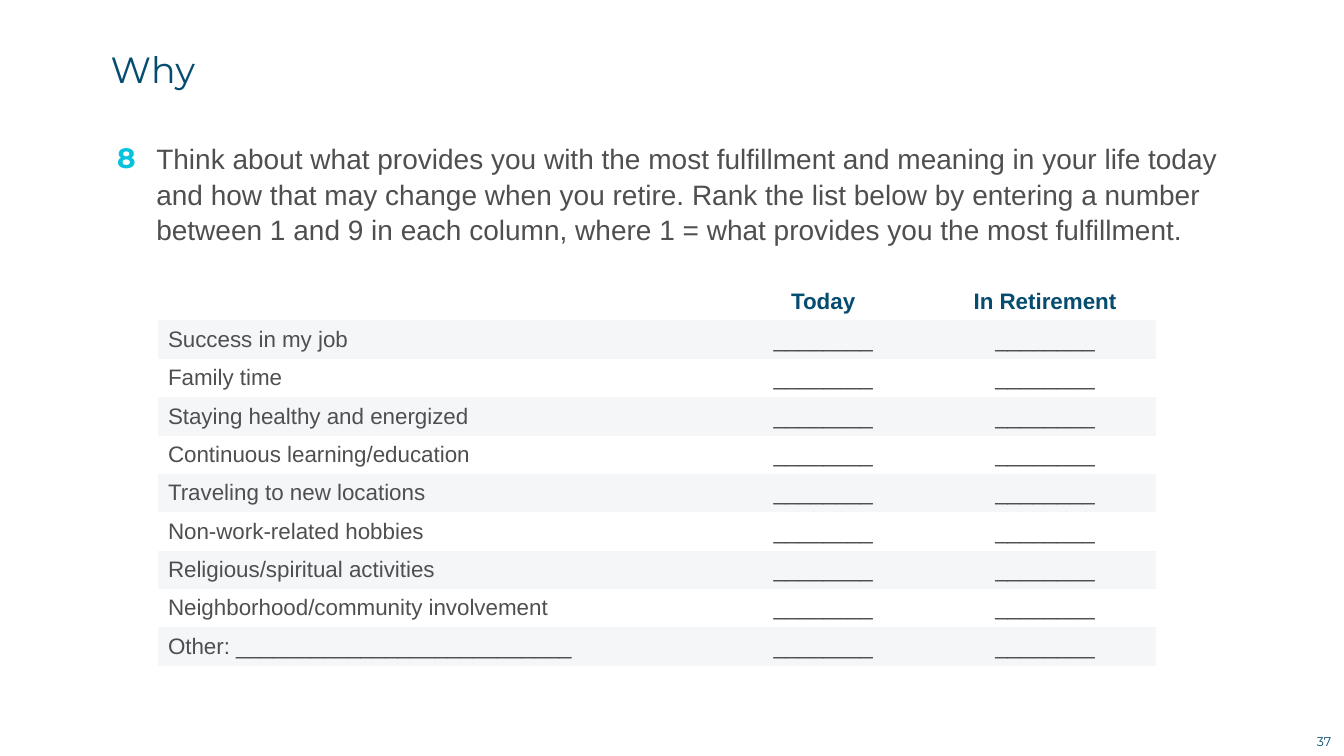
from dataclasses import dataclass
from typing import Optional

from lxml import etree
from pptx import Presentation
from pptx.dml.color import RGBColor
from pptx.enum.text import MSO_ANCHOR, PP_ALIGN
from pptx.oxml.ns import qn
from pptx.util import Cm, Pt

LEFT, CENTER = PP_ALIGN.LEFT, PP_ALIGN.CENTER
TOP, MIDDLE = MSO_ANCHOR.TOP, MSO_ANCHOR.MIDDLE
PLAIN_TABLE_STYLE = "{2D5ABB26-0587-4C30-8999-92F81FD0307C}"


@dataclass(frozen=True)
class Theme:
    navy: RGBColor = RGBColor(0x05, 0x4C, 0x70)
    cyan: RGBColor = RGBColor(0x05, 0xC3, 0xDE)
    grey: RGBColor = RGBColor(0x4F, 0x4F, 0x4F)
    band: RGBColor = RGBColor(0xF4, 0xF6, 0xF8)
    heading_font: str = "Montserrat"
    body_font: str = "Arial"
    title_size: int = 26
    prompt_size: int = 20
    table_size: int = 16
    page_size: int = 9


THEME = Theme()


@dataclass(frozen=True)
class TextStyle:
    font: str
    size: int
    color: RGBColor
    bold: bool = False
    align: PP_ALIGN = LEFT


@dataclass(frozen=True)
class TextBlock:
    """Text with its place in centimetres."""
    text: str
    left: float
    top: float
    width: float
    height: float
    style: TextStyle
    anchor: MSO_ANCHOR = TOP
    side_inset: float = 0
    line_spacing: Optional[float] = None


BLOCKS = [
    TextBlock("37", 32.94, 18.36, 0.86, 0.64,
              TextStyle(THEME.heading_font, THEME.page_size, THEME.navy, align=CENTER), MIDDLE),
    TextBlock("Why", 2.54, 0.71, 29.21, 2.06,
              TextStyle(THEME.heading_font, THEME.title_size, THEME.navy), MIDDLE, 0.25),
    TextBlock("Think about what provides you with the most fulfillment and meaning in your life "
              "today and how that may change when you retire. Rank the list below by entering a "
              "number between 1 and 9 in each column, where 1 = what provides you the most "
              "fulfillment.", 3.94, 3.53, 26.95, 2.57,
              TextStyle(THEME.body_font, THEME.prompt_size, THEME.grey), line_spacing=1.05),
    TextBlock("8", 2.95, 3.53, 1.02, 0.86,
              TextStyle(THEME.heading_font, THEME.prompt_size, THEME.cyan, bold=True)),
]

COLUMN_WIDTHS = [13.97, 5.59, 5.59]
TABLE_HEIGHT = 9.66
HEADINGS = ["", "Today", "In Retirement"]
ANSWER_BLANK = "_" * 8
SOURCES_OF_FULFILLMENT = [
    "Success in my job",
    "Family time",
    "Staying healthy and energized",
    "Continuous learning/education",
    "Traveling to new locations",
    "Non-work-related hobbies",
    "Religious/spiritual activities",
    "Neighborhood/community involvement",
    "Other: " + "_" * 27,
]


def write(paragraph, text: str, style: TextStyle) -> None:
    paragraph.alignment = style.align
    if not text:
        # An empty paragraph takes its height from its end mark.
        etree.SubElement(paragraph._p, qn("a:endParaRPr"), sz=str(style.size * 100))
        return
    run = paragraph.add_run()
    run.text = text
    run.font.name = style.font
    run.font.size = Pt(style.size)
    run.font.bold = style.bold
    run.font.color.rgb = style.color


def add_block(slide, block: TextBlock) -> None:
    box = slide.shapes.add_textbox(Cm(block.left), Cm(block.top), Cm(block.width), Cm(block.height))
    frame = box.text_frame
    frame.word_wrap = True
    frame.vertical_anchor = block.anchor
    frame.margin_left = frame.margin_right = Cm(block.side_inset)
    frame.margin_top = frame.margin_bottom = 0
    paragraph = frame.paragraphs[0]
    paragraph.line_spacing = block.line_spacing
    write(paragraph, block.text, block.style)


def add_ranking_table(slide) -> None:
    rows = [HEADINGS] + [[source, ANSWER_BLANK, ANSWER_BLANK] for source in SOURCES_OF_FULFILLMENT]
    holder = slide.shapes.add_table(len(rows), len(HEADINGS), Cm(3.98), Cm(7.11),
                                    Cm(sum(COLUMN_WIDTHS)), Cm(TABLE_HEIGHT))
    ranking = holder.table
    ranking.first_row = ranking.horz_banding = False
    for style_id in holder.element.iter(qn("a:tableStyleId")):
        style_id.text = PLAIN_TABLE_STYLE
    for column, width in zip(ranking.columns, COLUMN_WIDTHS):
        column.width = Cm(width)
    for r, texts in enumerate(rows):
        ranking.rows[r].height = Cm(TABLE_HEIGHT / len(rows))
        is_heading = r == 0
        for c, text in enumerate(texts):
            cell = ranking.cell(r, c)
            cell.vertical_anchor = MIDDLE
            if r % 2:
                cell.fill.solid()
                cell.fill.fore_color.rgb = THEME.band
            else:
                cell.fill.background()
            style = TextStyle(THEME.body_font, THEME.table_size,
                              THEME.navy if is_heading else THEME.grey,
                              is_heading, CENTER if c else LEFT)
            write(cell.text_frame.paragraphs[0], text, style)


def main() -> None:
    deck = Presentation()
    deck.slide_width, deck.slide_height = Cm(33.87), Cm(19.05)
    slide = deck.slides.add_slide(deck.slide_layouts[6])
    for block in BLOCKS:
        add_block(slide, block)
    add_ranking_table(slide)
    deck.save("out.pptx")


if __name__ == "__main__":
    main()
